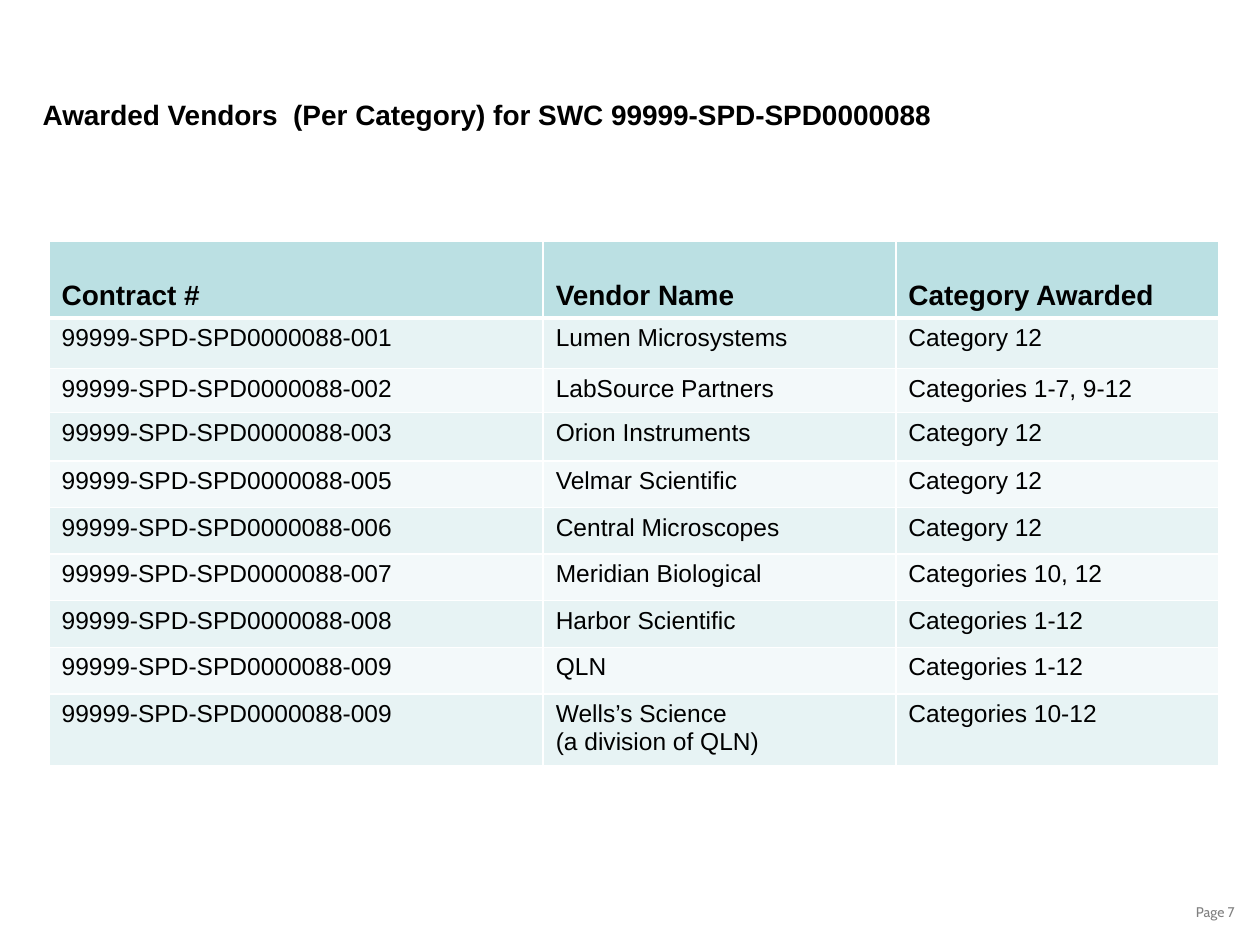
from lxml import etree
from pptx import Presentation
from pptx.dml.color import RGBColor
from pptx.enum.text import MSO_ANCHOR, PP_ALIGN
from pptx.oxml.ns import qn
from pptx.util import Cm, Pt

LEFT, CENTER = PP_ALIGN.LEFT, PP_ALIGN.CENTER
TOP, BOTTOM = MSO_ANCHOR.TOP, MSO_ANCHOR.BOTTOM

COLORS = {
    "text": "000000",
    "page": "808080",
    "header": "BBE0E3",
    "odd": "E7F3F4",
    "even": "F3F9FA",
    "border": "FFFFFF",
}

TITLE = "Awarded Vendors  (Per Category) for SWC 99999-SPD-SPD0000088"
PAGE = "Page 7"
CONTRACT = "99999-SPD-SPD0000088-"
HEADINGS = ("Contract #", "Vendor Name", "Category Awarded")
AWARDS = [
    ("001", "Lumen Microsystems", "Category 12"),
    ("002", "LabSource Partners", "Categories 1-7, 9-12"),
    ("003", "Orion Instruments", "Category 12"),
    ("005", "Velmar Scientific", "Category 12"),
    ("006", "Central Microscopes", "Category 12"),
    ("007", "Meridian Biological", "Categories 10, 12"),
    ("008", "Harbor Scientific", "Categories 1-12"),
    ("009", "QLN", "Categories 1-12"),
    ("009", "Wells’s Science\n(a division of QLN)", "Categories 10-12"),
]
COLUMN_WIDTHS = (9.96, 7.11, 6.5)
ROW_HEIGHTS = (1.55, 1.02, 0.89, 0.97) + (0.94,) * 5 + (1.42,)


def style_text(frame, size, font="Arial", color="text", bold=False, align=LEFT):
    for paragraph in frame.paragraphs:
        paragraph.alignment = align
        for run in paragraph.runs:
            run.font.name = font
            run.font.size = Pt(size)
            run.font.bold = bold
            run.font.color.rgb = RGBColor.from_string(COLORS[color])


def add_label(slide, text, left, top, width, height, wrap=True, **style):
    label = slide.shapes.add_textbox(Cm(left), Cm(top), Cm(width), Cm(height))
    label.text_frame.word_wrap = wrap
    label.text_frame.text = text
    style_text(label.text_frame, **style)


def set_borders(cell, **points):
    properties = cell._tc.get_or_add_tcPr()
    for side, width in points.items():
        line = etree.SubElement(properties, qn(f"a:ln{side}"), w=str(Pt(width)))
        fill = etree.SubElement(line, qn("a:solidFill"))
        etree.SubElement(fill, qn("a:srgbClr"), val=COLORS["border"])


def add_awards(slide):
    rows = [HEADINGS] + [(CONTRACT + number, *rest) for number, *rest in AWARDS]
    awards = slide.shapes.add_table(
        len(rows), len(HEADINGS), Cm(0.99), Cm(4.86),
        Cm(sum(COLUMN_WIDTHS)), Cm(sum(ROW_HEIGHTS)),
    ).table
    for column, width in zip(awards.columns, COLUMN_WIDTHS):
        column.width = Cm(width)
    for index, (row, height, texts) in enumerate(zip(awards.rows, ROW_HEIGHTS, rows)):
        row.height = Cm(height)
        heading = index == 0
        shade = "header" if heading else "odd" if index % 2 else "even"
        for cell, text in zip(row.cells, texts):
            cell.text_frame.text = text
            style_text(cell.text_frame, size=16 if heading else 14, bold=heading)
            cell.vertical_anchor = BOTTOM if heading else TOP
            set_borders(cell, L=1, R=1, T=3 if index == 1 else 1, B=3 if heading else 1)
            cell.fill.solid()
            cell.fill.fore_color.rgb = RGBColor.from_string(COLORS[shade])


def main():
    deck = Presentation()
    deck.slide_width, deck.slide_height = Cm(25.4), Cm(19.05)
    slide = deck.slides.add_slide(deck.slide_layouts[6])
    add_label(slide, PAGE, 23.6, 18.08, 1.8, 0.69,
              size=8, font="Cabin", color="page", align=CENTER)
    add_label(slide, TITLE, 0.61, 1.85, 18.54, 0.86, wrap=False, size=16, bold=True)
    add_awards(slide)
    deck.save("out.pptx")


if __name__ == "__main__":
    main()
